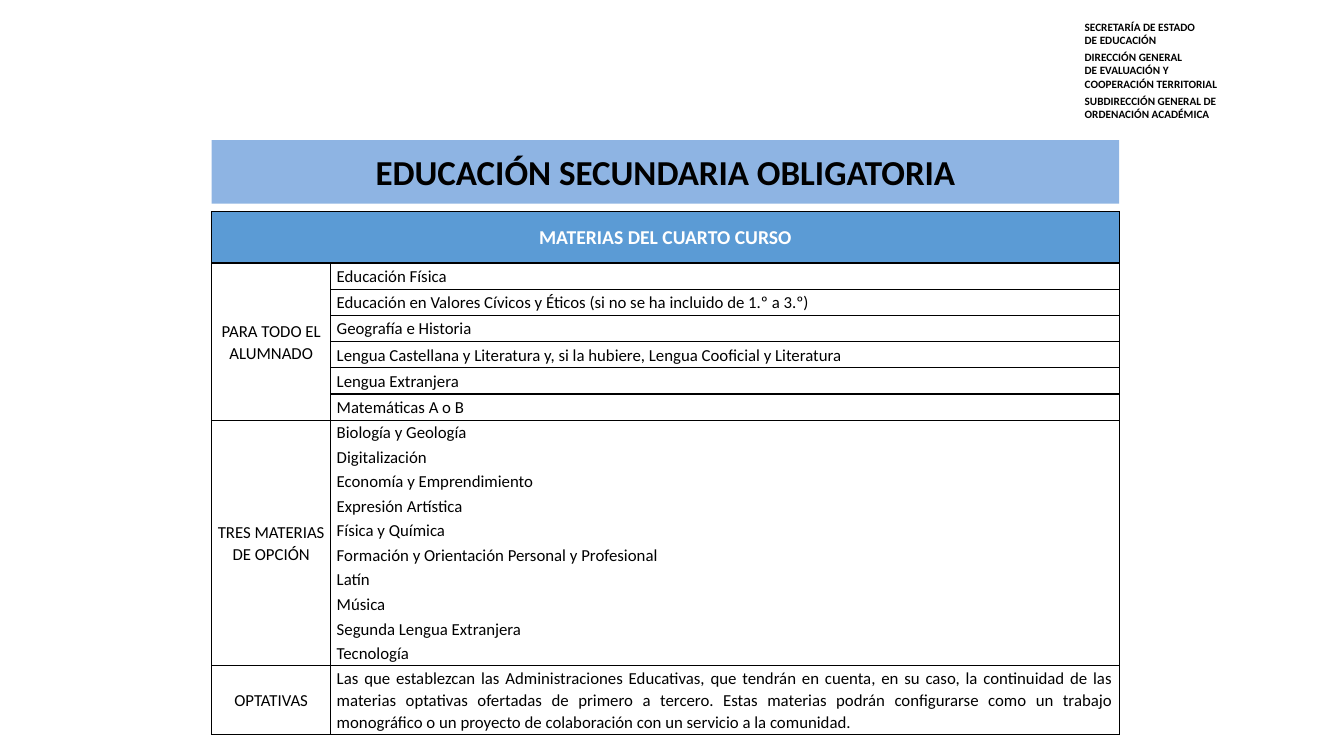
from dataclasses import dataclass

from lxml import etree
from pptx import Presentation
from pptx import util as u
from pptx.dml import color
from pptx.enum import text
from pptx.oxml import ns


@dataclass(frozen=True)
class Theme:
    face: str = "Calibri"
    ink: str = "000000"
    pale: str = "FFFFFF"
    band: str = "8EB4E3"
    head: str = "5B9BD5"
    small: int = 8
    body: int = 12
    mid: int = 14
    large: int = 25


THEME = Theme()
MID = text.MSO_ANCHOR.MIDDLE
LEFT, JUST, CENTER = text.PP_ALIGN.LEFT, text.PP_ALIGN.JUSTIFY, text.PP_ALIGN.CENTER

OFFICE = [
    ["SECRETARÍA DE ESTADO", "DE EDUCACIÓN"],
    ["DIRECCIÓN GENERAL", "DE EVALUACIÓN Y", "COOPERACIÓN TERRITORIAL"],
    ["SUBDIRECCIÓN GENERAL DE ORDENACIÓN ACADÉMICA"],
]
COMMON = [
    "Educación Física",
    "Educación en Valores Cívicos y Éticos (si no se ha incluido de 1.º a 3.º)",
    "Geografía e Historia",
    "Lengua Castellana y Literatura y, si la hubiere, Lengua Cooficial y Literatura",
    "Lengua Extranjera",
    "Matemáticas A o B",
]
CHOICE = [
    "Biología y Geología",
    "Digitalización",
    "Economía y Emprendimiento",
    "Expresión Artística",
    "Física y Química",
    "Formación y Orientación Personal y Profesional",
    "Latín",
    "Música",
    "Segunda Lengua Extranjera",
    "Tecnología",
]
EXTRA = (
    "Las que establezcan las Administraciones Educativas, que tendrán en cuenta, "
    "en su caso, la continuidad de las materias optativas ofertadas de primero a "
    "tercero. Estas materias podrán configurarse como un trabajo monográfico o un "
    "proyecto de colaboración con un servicio a la comunidad."
)


def apply(item, form):
    for key, value in form.items():
        setattr(item, key, value)


def write(frame, lines, size, tint=THEME.ink, bold=False, forms=None, **form):
    for i, line in enumerate(lines):
        para = frame.paragraphs[0] if i == 0 else frame.add_paragraph()
        apply(para, {**form, **(forms or {}).get(i, {})})
        run = para.add_run()
        run.text = line
        apply(run.font, {"name": THEME.face, "size": u.Pt(size), "bold": bold})
        run.font.color.rgb = color.RGBColor.from_string(tint)


def paint(item, tint):
    item.fill.solid()
    item.fill.fore_color.rgb = color.RGBColor.from_string(tint)


def frame_cell(cell):
    props = cell._tc.get_or_add_tcPr()
    for i, side in enumerate(("lnL", "lnR", "lnT", "lnB")):
        line = etree.Element(ns.qn(f"a:{side}"), w=str(u.Pt(1)))
        fill = etree.SubElement(line, ns.qn("a:solidFill"))
        etree.SubElement(fill, ns.qn("a:srgbClr"), val=THEME.ink)
        props.insert(i, line)


def add_office(slide, box):
    frame = slide.shapes.add_textbox(*map(u.Inches, box)).text_frame
    frame.word_wrap = True
    lines, forms = [], {}
    for group in OFFICE:
        if lines:
            forms[len(lines)] = {"space_before": u.Pt(2.4)}
        lines += group
    write(frame, lines, THEME.small, bold=True, forms=forms, alignment=LEFT)


def add_title(slide, box):
    title = slide.shapes.title
    apply(title, dict(zip(("left", "top", "width", "height"), map(u.Inches, box))))
    paint(title, THEME.band)
    frame = title.text_frame
    apply(frame, {"word_wrap": True, "vertical_anchor": MID,
                  "auto_size": text.MSO_AUTO_SIZE.NONE})
    write(frame, ["EDUCACIÓN SECUNDARIA OBLIGATORIA"], THEME.large, bold=True,
          alignment=CENTER)


def add_grid(slide, box):
    wide = box[2]
    rows = [0.51] + [0.26] * len(COMMON) + [2.43, 0.69]
    cols = [1.18, wide - 1.18]
    grid = slide.shapes.add_table(len(rows), len(cols), *map(u.Inches, box)).table
    apply(grid, {"first_row": False, "horz_banding": False})
    for row, tall in zip(grid.rows, rows):
        row.height = u.Inches(tall)
    for col, span in zip(grid.columns, cols):
        col.width = u.Inches(span)
    side = u.Inches(0.06)
    for cell in grid.iter_cells():
        apply(cell, {"margin_left": side, "margin_right": side, "margin_top": 0,
                     "margin_bottom": 0, "vertical_anchor": MID})
        cell.fill.background()
        frame_cell(cell)

    last = len(rows) - 1
    pick = last - 1
    grid.cell(0, 0).merge(grid.cell(0, 1))
    grid.cell(1, 0).merge(grid.cell(len(COMMON), 0))
    paint(grid.cell(0, 0), THEME.head)
    form = {"line_spacing": 1.07, "space_after": u.Pt(4)}
    write(grid.cell(0, 0).text_frame, ["MATERIAS DEL CUARTO CURSO"], THEME.mid,
          THEME.pale, True, alignment=CENTER, **form)
    labels = {1: "PARA TODO EL ALUMNADO", pick: "TRES MATERIAS DE OPCIÓN",
              last: "OPTATIVAS"}
    for i, label in labels.items():
        write(grid.cell(i, 0).text_frame, [label], THEME.body,
              alignment=CENTER, **form)
    for i, line in [*enumerate(COMMON, 1), (last, EXTRA)]:
        write(grid.cell(i, 1).text_frame, [line], THEME.body, alignment=JUST, **form)
    write(grid.cell(pick, 1).text_frame, CHOICE, THEME.body, alignment=JUST,
          line_spacing=1.2, forms={0: {"line_spacing": 1.07}})


def main():
    deck = Presentation()
    apply(deck, {"slide_width": u.Inches(13.33), "slide_height": u.Inches(7.5)})
    slide = deck.slides.add_slide(deck.slide_layouts[5])
    add_office(slide, (10.66, 0.15, 2.04, 1.11))
    add_title(slide, (2.1, 1.39, 9, 0.63))
    add_grid(slide, (2.1, 2.1, 9, 5.2))
    deck.save("out.pptx")


if __name__ == "__main__":
    main()
